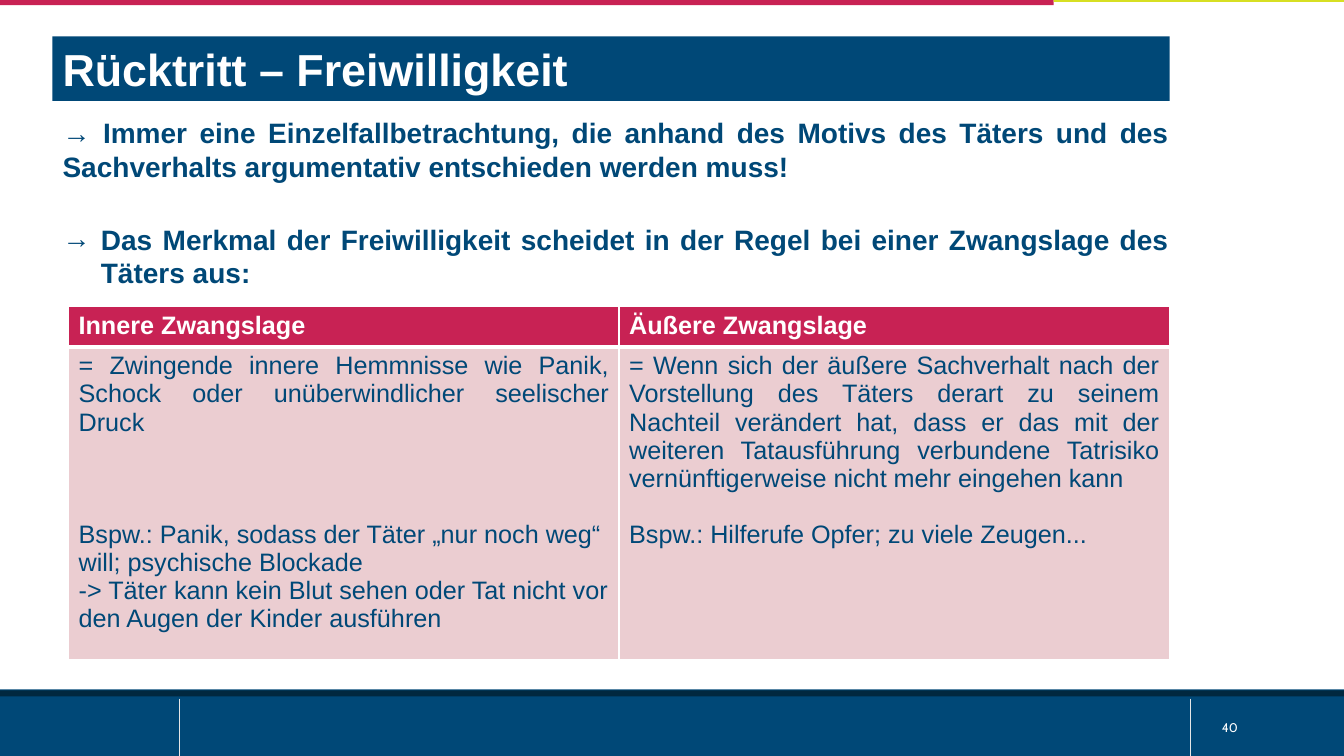
from pptx import Presentation
from pptx.dml.color import RGBColor
from pptx.enum.shapes import MSO_CONNECTOR as Connector, MSO_SHAPE as Shape
from pptx.enum.text import MSO_ANCHOR as Anchor, MSO_AUTO_SIZE as AutoSize, PP_ALIGN as Align
from pptx.oxml.ns import qn
from pptx.util import Inches, Pt
from lxml.etree import SubElement

COLORS = {
    "blue": "004877", "navy": "01283F", "crimson": "C82254", "lime": "D7DF23",
    "pink": "EBCDD1", "rule": "E6E6E6", "white": "FFFFFF",
}


def rgb(name):
    return RGBColor.from_string(COLORS[name])


class FreiwilligkeitSlide:
    frame_format = {"word_wrap": True, "auto_size": AutoSize.NONE}

    def __init__(self, deck):
        self.slide = deck.slides.add_slide(deck.slide_layouts[1])
        self.shapes = self.slide.shapes

    def typeset(self, paragraph, text, size, color, bold=False, font="Arial", align=Align.LEFT, before=0):
        paragraph.text = text
        for key, value in {"alignment": align, "space_before": Pt(before)}.items():
            setattr(paragraph, key, value)
        for key, value in {"name": font, "size": Pt(size), "bold": bold}.items():
            setattr(paragraph.font, key, value)
        paragraph.font.color.rgb = rgb(color)

    def prepare(self, holder, box, anchor):
        for key, value in zip(("left", "top", "width", "height"), box):
            setattr(holder, key, Inches(value))
        frame = holder.text_frame
        for key, value in {**self.frame_format, "vertical_anchor": anchor}.items():
            setattr(frame, key, value)
        return frame

    def bar(self, box, color):
        bar = self.shapes.add_shape(Shape.RECTANGLE, *map(Inches, box))
        bar.shadow.inherit = False
        bar.fill.solid()
        bar.fill.fore_color.rgb = rgb(color)
        bar.line.fill.background()

    def divider(self, x, top, bottom):
        divider = self.shapes.add_connector(
            Connector.STRAIGHT, *map(Inches, (x, top, x, bottom)))
        divider.line.color.rgb = rgb("rule")
        divider.line.width = Pt(0.5)
        SubElement(divider._element.spPr, qn("a:effectLst"))

    def title(self, text, box):
        heading = self.shapes.title
        frame = self.prepare(heading, box, Anchor.MIDDLE)
        heading.fill.solid()
        heading.fill.fore_color.rgb = rgb("blue")
        self.typeset(frame.paragraphs[0], text, 32, "white", bold=True)

    def theses(self, items, box):
        frame = self.prepare(self.slide.placeholders[1], box, Anchor.TOP)
        for index, (text, bullet, indent, before) in enumerate(items):
            paragraph = frame.add_paragraph() if index else frame.paragraphs[0]
            props = paragraph._p.get_or_add_pPr()
            props.set("marL", str(Inches(indent)))
            props.set("indent", str(-Inches(indent)))
            if bullet:
                SubElement(props, qn("a:buChar"), char=bullet)
            else:
                SubElement(props, qn("a:buNone"))
            self.typeset(paragraph, text, 20, "blue", bold=True, align=Align.JUSTIFY, before=before)

    def page_number(self, text, box):
        number = self.shapes.add_textbox(*map(Inches, box))
        frame = self.prepare(number, box, Anchor.MIDDLE)
        self.typeset(frame.paragraphs[0], text, 9, "white", font="Cabin")

    def cell(self, cell, paragraphs, fill, color, bold, borders):
        props = cell._tc.get_or_add_tcPr()
        for side, width in borders.items():
            line = SubElement(props, qn(f"a:ln{side}"), w=str(Pt(width)))
            SubElement(SubElement(line, qn("a:solidFill")), qn("a:srgbClr"), val=COLORS["white"])
        cell.fill.solid()
        cell.fill.fore_color.rgb = rgb(fill)
        for index, (text, align, before) in enumerate(paragraphs):
            frame = cell.text_frame
            paragraph = frame.add_paragraph() if index else frame.paragraphs[0]
            self.typeset(paragraph, text, 18, color, bold=bold, align=align, before=before)

    def comparison(self, columns, box, row_heights):
        table = self.shapes.add_table(2, len(columns), *map(Inches, box)).table
        for row, height in zip(table.rows, row_heights):
            row.height = Inches(height)
        for index, (heading, content) in enumerate(columns):
            self.cell(table.cell(0, index), [(heading, Align.LEFT, 0)], "crimson", "white", True,
                      {"L": 1, "R": 1, "T": 1, "B": 3})
            self.cell(table.cell(1, index), content, "pink", "blue", False,
                      {"L": 1, "R": 1, "T": 3, "B": 1})


def main():
    deck = Presentation()
    deck.slide_width, deck.slide_height = Inches(13.33), Inches(7.5)
    page = FreiwilligkeitSlide(deck)

    for box, color in (
        ((0, 6.84, 13.33, 0.66), "blue"),
        ((0, 6.85, 13.33, 0.06), "navy"),
        ((0, 0, 10.45, 0.05), "crimson"),
        ((10.45, 0, 2.88, 0.02), "lime"),
    ):
        page.bar(box, color)
    for x in (1.78, 11.81):
        page.divider(x, 6.93, 7.5)
    page.page_number("40", (12.02, 7.02, 1.31, 0.4))

    page.title("Rücktritt – Freiwilligkeit", (0.52, 0.36, 11.08, 0.64))
    page.theses([
        ("→ Immer eine Einzelfallbetrachtung, die anhand des Motivs des Täters und des "
         "Sachverhalts argumentativ entschieden werden muss!", None, 0, 0),
        ("Das Merkmal der Freiwilligkeit scheidet in der Regel bei einer Zwangslage des "
         "Täters aus:", "→", 0.38, 28),
    ], (0.52, 1.1, 11.18, 2.66))

    innere = [
        ("= Zwingende innere Hemmnisse wie Panik, Schock oder unüberwindlicher seelischer Druck",
         Align.JUSTIFY, 0),
        ("Bspw.: Panik, sodass der Täter „nur noch weg“ will; psychische Blockade", Align.LEFT, 60),
        ("-> Täter kann kein Blut sehen oder Tat nicht vor den Augen der Kinder ausführen",
         Align.LEFT, 0),
    ]
    aeussere = [
        ("= Wenn sich der äußere Sachverhalt nach der Vorstellung des Täters derart zu seinem "
         "Nachteil verändert hat, dass er das mit der weiteren Tatausführung verbundene "
         "Tatrisiko vernünftigerweise nicht mehr eingehen kann", Align.JUSTIFY, 0),
        ("Bspw.: Hilferufe Opfer; zu viele Zeugen...", Align.LEFT, 20),
    ]
    page.comparison([("Innere Zwangslage", innere), ("Äußere Zwangslage", aeussere)],
                    (0.68, 3.04, 10.92, 3.5), (0.4, 3.1))

    deck.save("out.pptx")


if __name__ == "__main__":
    main()
